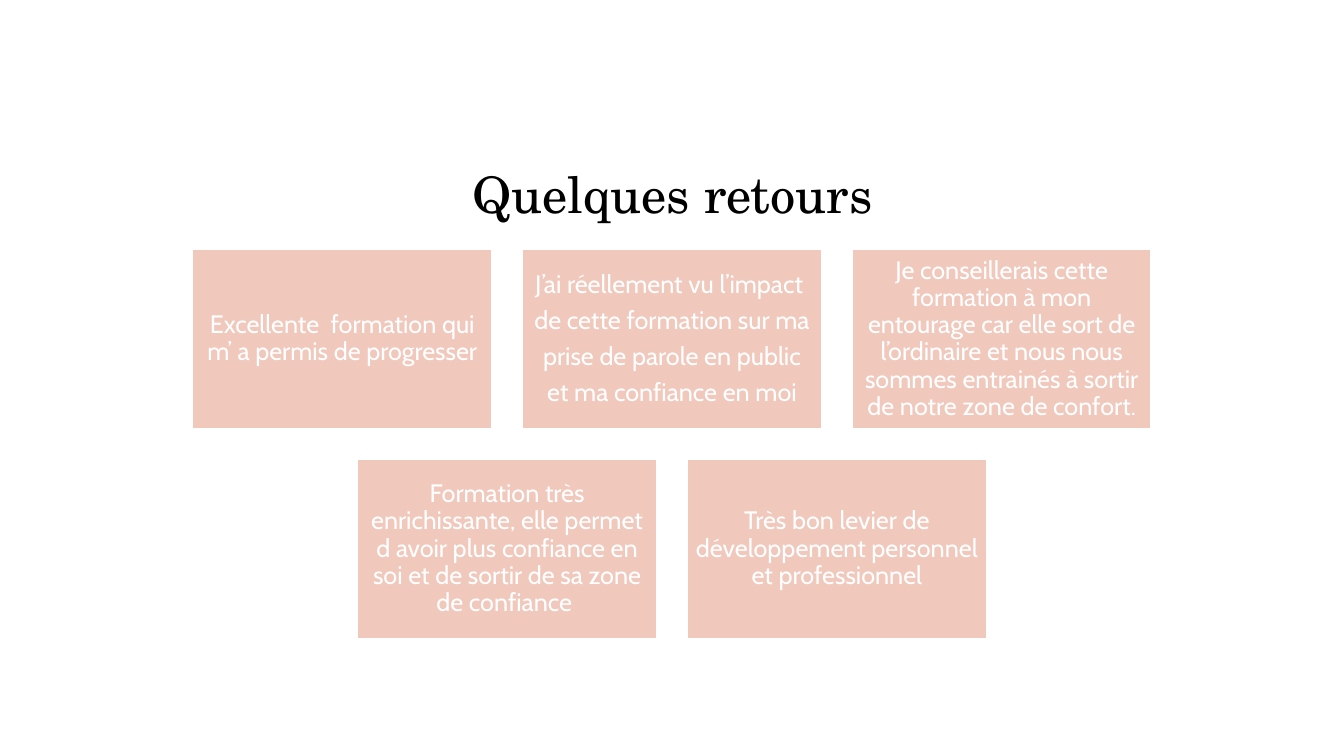
from pptx import Presentation
from pptx.dml.color import RGBColor
from pptx.enum.shapes import MSO_SHAPE
from pptx.enum.text import MSO_ANCHOR, PP_ALIGN
from pptx.util import Cm, Pt

RECTANGLE = MSO_SHAPE.RECTANGLE
CENTER = PP_ALIGN.CENTER
MIDDLE, BOTTOM = MSO_ANCHOR.MIDDLE, MSO_ANCHOR.BOTTOM

COLORS = {"title": "000000", "card": "F0C8BC", "white": "FFFFFF"}
TITLE_FONT = {"name": "TeX Gyre Schola", "size": Pt(36)}
CARD_FONT = {"name": "Cabin", "size": Pt(18)}
CARD_FRAME = {
    "word_wrap": True,
    "vertical_anchor": MIDDLE,
    "margin_left": Cm(0.18),
    "margin_right": Cm(0.18),
    "margin_top": Cm(0.18),
    "margin_bottom": Cm(0.18),
}
CARD_PARAGRAPH = {"alignment": CENTER, "line_spacing": 0.9, "space_after": Pt(6.3)}

SLIDE_WIDTH, SLIDE_HEIGHT = 33.87, 19.05
CARD_WIDTH, CARD_HEIGHT, GAP = 7.57, 4.55, 0.74
FIRST_ROW_TOP = 6.27

FEEDBACK_ROWS = [
    [
        ["Excellente  formation qui m’ a permis de progresser"],
        [
            "J’ai réellement vu l’impact ",
            "de cette formation sur ma",
            "prise de parole en public",
            "et ma confiance en moi",
        ],
        [
            "Je conseillerais cette formation à mon entourage car elle sort de "
            "l’ordinaire et nous nous sommes entrainés à sortir de notre zone de confort."
        ],
    ],
    [
        [
            "Formation très enrichissante, elle permet d avoir plus confiance en "
            "soi et de sortir de sa zone de confiance "
        ],
        ["Très bon levier de développement personnel et professionnel"],
    ],
]


def set_values(target, values):
    for name, value in values.items():
        setattr(target, name, value)


def write_paragraph(paragraph, text, layout, font, color):
    set_values(paragraph, layout)
    span = paragraph.add_run()
    span.text = text
    set_values(span.font, font)
    span.font.color.rgb = RGBColor.from_string(COLORS[color])


deck = Presentation()
deck.slide_width, deck.slide_height = Cm(SLIDE_WIDTH), Cm(SLIDE_HEIGHT)
page = deck.slides.add_slide(deck.slide_layouts[6])

title_box = page.shapes.add_textbox(Cm(4.5), Cm(2.77), Cm(24.89), Cm(3))
set_values(title_box.text_frame, {"word_wrap": True, "vertical_anchor": BOTTOM})
write_paragraph(
    title_box.text_frame.paragraphs[0],
    "Quelques retours",
    {"alignment": CENTER, "line_spacing": 0.9},
    TITLE_FONT,
    "title",
)

for row, feedbacks in enumerate(FEEDBACK_ROWS):
    row_width = len(feedbacks) * (CARD_WIDTH + GAP) - GAP
    row_left = (SLIDE_WIDTH - row_width) / 2
    top = FIRST_ROW_TOP + row * (CARD_HEIGHT + GAP)
    for column, lines in enumerate(feedbacks):
        left = row_left + column * (CARD_WIDTH + GAP)
        card = page.shapes.add_shape(
            RECTANGLE, Cm(left), Cm(top), Cm(CARD_WIDTH), Cm(CARD_HEIGHT)
        )
        card.shadow.inherit = False
        card.fill.solid()
        card.fill.fore_color.rgb = RGBColor.from_string(COLORS["card"])
        card.line.color.rgb = RGBColor.from_string(COLORS["white"])
        card.line.width = Pt(2)
        frame = card.text_frame
        set_values(frame, CARD_FRAME)
        for index, line in enumerate(lines):
            paragraph = frame.add_paragraph() if index else frame.paragraphs[0]
            write_paragraph(paragraph, line, CARD_PARAGRAPH, CARD_FONT, "white")

deck.save("out.pptx")
